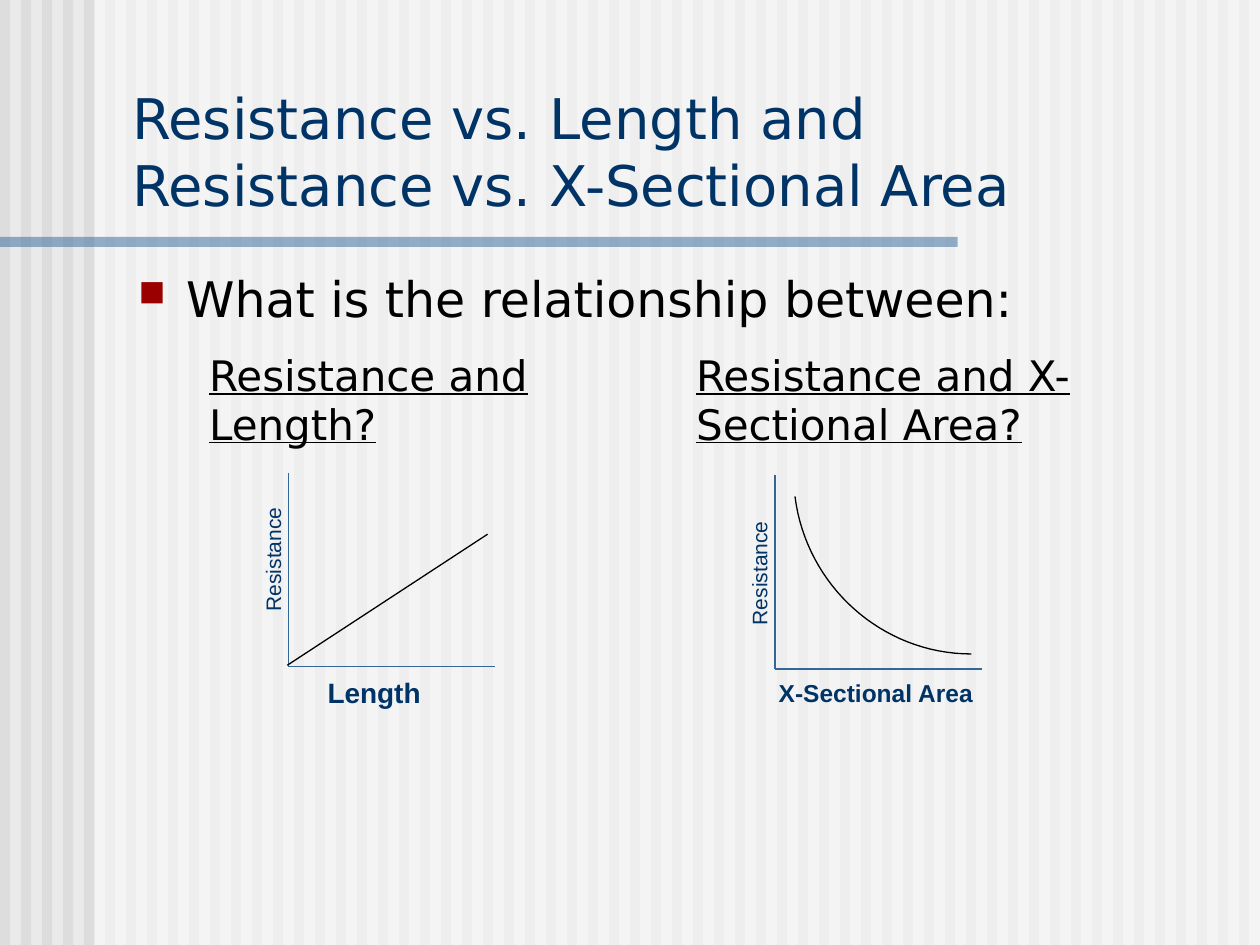
from dataclasses import dataclass

from lxml.etree import SubElement
from pptx import Presentation
from pptx.dml.color import RGBColor
from pptx.enum.shapes import MSO_CONNECTOR, MSO_SHAPE
from pptx.enum.text import MSO_ANCHOR, PP_ALIGN
from pptx.oxml.ns import qn
from pptx.util import Inches, Pt


@dataclass(frozen=True)
class Theme:
    """Colours, fonts and type sizes of the slide."""
    background: str = "EAEAEA"
    stripe: str = "DDDDDD"
    veil: str = "FFFFFF"
    accent: str = "336699"
    heading: str = "003366"
    ink: str = "000000"
    bullet: str = "9A0000"
    text_font: str = "DejaVu Sans"
    label_font: str = "Arial"
    title_size: int = 32
    body_size: int = 28
    question_size: int = 24
    length_size: int = 16
    area_size: int = 14
    axis_size: int = 12
    line_width: float = 0.75


THEME = Theme()


def inches(*values):
    """Convert several numbers to lengths."""
    return [Inches(value) for value in values]


def style_font(font, name, size, color, bold=None, underline=None):
    """Set the typeface, size, colour and emphasis of a font."""
    font.name = name
    font.size = Pt(size)
    font.color.rgb = RGBColor.from_string(color)
    font.bold = bold
    font.underline = underline


def add_bar(shapes, left, top, width, height, color, alpha=None):
    """Add a borderless rectangle, with opacity in percent if given."""
    bar = shapes.add_shape(MSO_SHAPE.RECTANGLE, *inches(left, top, width, height))
    bar.shadow.inherit = False
    bar.line.fill.background()
    bar.fill.solid()
    bar.fill.fore_color.rgb = RGBColor.from_string(color)
    if alpha is not None:
        tint = bar.fill._xPr.find(".//" + qn("a:srgbClr"))
        SubElement(tint, qn("a:alpha"), val=str(alpha * 1000))


def add_text(shapes, frame, text, font, size, color, bold=None):
    """Add a wrapping one-paragraph text box and return it."""
    box = shapes.add_textbox(*inches(*frame))
    box.text_frame.word_wrap = True
    box.text_frame.text = text
    style_font(box.text_frame.paragraphs[0].font, font, size, color, bold)
    return box


def add_bullet(para, indent):
    """Give a paragraph a hanging square bullet."""
    properties = para._p.get_or_add_pPr()
    properties.set("marL", str(Inches(indent)))
    properties.set("indent", str(-Inches(indent)))
    bullet_color = properties.makeelement(qn("a:buClr"))
    SubElement(bullet_color, qn("a:srgbClr"), val=THEME.bullet)
    bullet_size = properties.makeelement(qn("a:buSzPct"), val="75000")
    bullet_char = properties.makeelement(qn("a:buChar"), char="■")
    for position, element in enumerate((bullet_color, bullet_size, bullet_char)):
        properties.insert(position, element)


def add_line(shapes, start, end, color):
    """Add a thin straight line without shadow."""
    line = shapes.add_connector(MSO_CONNECTOR.STRAIGHT, *inches(*start, *end))
    line.line.color.rgb = RGBColor.from_string(color)
    line.line.width = Pt(THEME.line_width)
    SubElement(line._element.spPr, qn("a:effectLst"))


def add_curve(shapes, start, control_1, control_2, end, steps=32):
    """Add an open outline that follows a cubic Bezier curve."""
    def point(t):
        weights = ((1 - t) ** 3, 3 * t * (1 - t) ** 2, 3 * t * t * (1 - t), t ** 3)
        corners = (start, control_1, control_2, end)
        return tuple(
            Inches(sum(weight * corner[axis] for weight, corner in zip(weights, corners)))
            for axis in (0, 1)
        )

    builder = shapes.build_freeform(*point(0))
    builder.add_line_segments([point(step / steps) for step in range(1, steps + 1)], close=False)
    curve = builder.convert_to_shape()
    curve.shadow.inherit = False
    curve.fill.background()
    curve.line.color.rgb = RGBColor.from_string(THEME.ink)
    curve.line.width = Pt(THEME.line_width)


def add_axes(slide, origin, label, label_frame, label_size, rise):
    """Add a pair of axes with a name below and a turned name at the left."""
    shapes = slide.shapes.add_group_shape().shapes
    x, y = origin
    name = add_text(shapes, label_frame, label, THEME.label_font, label_size, THEME.heading, True)
    name.text_frame.margin_left = name.text_frame.margin_right = 0
    add_line(shapes, (x, y - 1.54), origin, THEME.accent)
    add_line(shapes, origin, (x + 1.64, y), THEME.accent)
    width, height = 1.18, 0.19
    frame = (x - 0.18 - width / 2, y - rise - height / 2, width, height)
    side = add_text(shapes, frame, "Resistance", THEME.label_font, THEME.axis_size, THEME.heading)
    side.text_frame.paragraphs[0].alignment = PP_ALIGN.CENTER
    side.rotation = 270


def add_questions(slide, questions):
    """Add a plain one-row table of underlined questions."""
    frame = inches(1.56, 2.75, 7.73, 1.03)
    table = slide.shapes.add_table(1, len(questions), *frame).table
    table.first_row = table.horz_banding = False
    style = table._tbl.tblPr.find(qn("a:tableStyleId"))
    style.text = "{2D5ABB26-0587-4C30-8999-92F81FD0307C}"
    for cell, question in zip(table.rows[0].cells, questions):
        cell.fill.background()
        cell.text = question
        style_font(cell.text_frame.paragraphs[0].font, THEME.text_font,
                   THEME.question_size, THEME.ink, underline=True)


def add_backdrop(slide):
    """Add the striped background, its veil and the title rule."""
    slide.background.fill.solid()
    slide.background.fill.fore_color.rgb = RGBColor.from_string(THEME.background)
    shapes = slide.shapes.add_group_shape().shapes
    for index in range(60):
        add_bar(shapes, index / 6, 0, 0.08, 7.5, THEME.stripe)
    add_bar(shapes, 0.75, 0, 9.25, 7.5, THEME.veil, 50)
    add_bar(shapes, 0, 1.88, 7.6, 0.08, THEME.accent, 50)


def main():
    """Build the slide and save the deck."""
    deck = Presentation()
    deck.slide_width, deck.slide_height = inches(10, 7.5)
    slide = deck.slides.add_slide(deck.slide_layouts[6])
    add_backdrop(slide)
    title = add_text(slide.shapes, (0.95, 0.61, 8.93, 1.17),
                     "Resistance vs. Length and \vResistance vs. X-Sectional Area",
                     THEME.text_font, THEME.title_size, THEME.heading)
    title.text_frame.vertical_anchor = MSO_ANCHOR.BOTTOM
    body = add_text(slide.shapes, (1, 2.08, 8.67, 4.58), "What is the relationship between:",
                    THEME.text_font, THEME.body_size, THEME.ink)
    add_bullet(body.text_frame.paragraphs[0], 0.38)
    add_questions(slide, ("Resistance and Length?", "Resistance and X-Sectional Area?"))
    add_axes(slide, (2.29, 5.29), "Length", (2.6, 5.31, 0.91, 0.42), THEME.length_size, 0.85)
    add_axes(slide, (6.15, 5.31), "X-Sectional Area", (6.18, 5.33, 1.65, 0.28),
             THEME.area_size, 0.76)
    add_curve(slide.shapes, (6.31, 3.94), (6.4, 4.65), (7, 5.19), (7.71, 5.19))
    add_line(slide.shapes, (2.28, 5.28), (3.87, 4.24), THEME.ink)
    deck.save("out.pptx")


if __name__ == "__main__":
    main()
